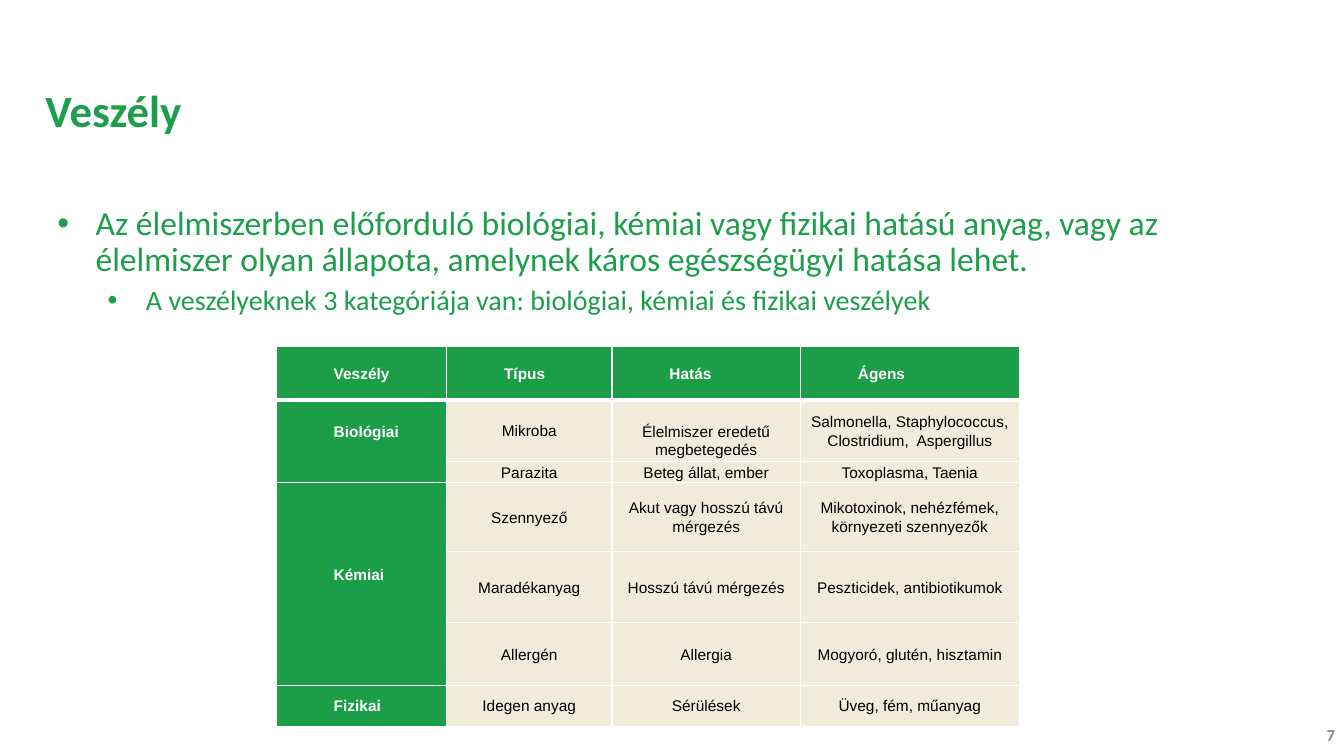
from lxml import etree
from pptx import Presentation, util as u
from pptx.dml.color import RGBColor
from pptx.enum import text
from pptx.oxml.ns import qn

GREEN, HEADER_GREEN, CREAM = "1C9E4A", "1C9E49", "F1EBDC"
WHITE, BLACK, GREY = "FFFFFF", "000000", "898989"
LINE = 0.19  # height of one table text line, inches


def style(paragraph, size, color, font="Calibri", bold=False):
    paragraph.font.size = u.Pt(size)
    paragraph.font.name = font
    paragraph.font.bold = bold
    paragraph.font.color.rgb = RGBColor.from_string(color)


def add_border(cell, side, points):
    line = etree.SubElement(cell._tc.get_or_add_tcPr(), qn(f"a:ln{side}"), w=str(u.Pt(points)))
    fill = etree.SubElement(line, qn("a:solidFill"))
    etree.SubElement(fill, qn("a:srgbClr"), val=WHITE)


deck = Presentation()
deck.slide_width, deck.slide_height = u.Inches(13.33), u.Inches(7.5)
slide = deck.slides.add_slide(deck.slide_layouts[5])

# Title
title = slide.shapes.title
title.left, title.top, title.width, title.height = map(u.Inches, (0.35, 0.4, 12.64, 1.45))
title.text_frame.text = "Veszély"
title.text_frame.auto_size = text.MSO_AUTO_SIZE.NONE
title.text_frame.vertical_anchor = text.MSO_ANCHOR.MIDDLE
heading = title.text_frame.paragraphs[0]
heading.alignment = text.PP_ALIGN.LEFT
heading.line_spacing = 0.9
style(heading, 32, GREEN, bold=True)

# Definition
definition = slide.shapes.add_textbox(*map(u.Inches, (0.35, 2, 12.64, 1.3))).text_frame
definition.word_wrap = True
points = [
    ("Az élelmiszerben előforduló biológiai, kémiai vagy fizikai hatású anyag, "
     "vagy az élelmiszer olyan állapota, amelynek káros egészségügyi hatása lehet.", 24),
    ("A veszélyeknek 3 kategóriája van: biológiai, kémiai és fizikai veszélyek", 20),
]
for level, (words, size) in enumerate(points):
    point = definition.paragraphs[0] if level == 0 else definition.add_paragraph()
    point.text = words
    point.level = level
    point.line_spacing = 0.9
    if level:
        point.space_before = u.Pt(5)
    props = point._p.get_or_add_pPr()
    props.set("marL", str(u.Inches(0.5 * (level + 1))))
    props.set("indent", str(u.Inches(-0.38)))
    etree.SubElement(props, qn("a:buFont"), typeface="Arial")
    etree.SubElement(props, qn("a:buChar"), char="•")
    style(point, size, GREEN)

# Slide number
number = slide.shapes.add_textbox(*map(u.Inches, (12.78, 7.09, 0.56, 0.4))).text_frame
number.word_wrap = True
number.vertical_anchor = text.MSO_ANCHOR.MIDDLE
number.text = "7"
number.paragraphs[0].alignment = text.PP_ALIGN.RIGHT
style(number.paragraphs[0], 12, GREY, bold=True)

# Hazard table
hazards = [
    ("Veszély", "Típus", "Hatás", "Ágens"),
    ("Biológiai", "Mikroba", "Élelmiszer eredetű megbetegedés",
     "Salmonella, Staphylococcus, Clostridium,  Aspergillus"),
    ("", "Parazita", "Beteg állat, ember", "Toxoplasma, Taenia"),
    ("Kémiai", "Szennyező", "Akut vagy hosszú távú mérgezés",
     "Mikotoxinok, nehézfémek, környezeti szennyezők"),
    ("", "Maradékanyag", "Hosszú távú mérgezés", "Peszticidek, antibiotikumok"),
    ("", "Allergén", "Allergia", "Mogyoró, glutén, hisztamin"),
    ("Fizikai", "Idegen anyag", "Sérülések", "Üveg, fém, műanyag"),
]
widths = [1.69, 1.64, 1.87, 2.17]
heights = [0.53, 0.61, 0.21, 0.68, 0.71, 0.62, 0.41]
table = slide.shapes.add_table(
    len(heights), len(widths), u.Inches(2.74), u.Inches(3.44),
    u.Inches(sum(widths)), u.Inches(sum(heights))).table
for column, width in zip(table.columns, widths):
    column.width = u.Inches(width)
for row, height in zip(table.rows, heights):
    row.height = u.Inches(height)

for r, hazard in enumerate(hazards):
    for c, words in enumerate(hazard):
        cell = table.cell(r, c)
        is_heading = r == 0 or c == 0
        for side in "LRTB":
            under_header = (r, side) in ((0, "B"), (1, "T"))
            add_border(cell, side, 3 if under_header else 1)
        cell.fill.solid()
        cell.fill.fore_color.rgb = RGBColor.from_string(HEADER_GREEN if is_heading else CREAM)
        cell.vertical_anchor = text.MSO_ANCHOR.MIDDLE
        cell.margin_left = u.Inches(0.57 if is_heading else 0.07)
        cell.margin_right = u.Inches(0.07)
        cell.margin_top = cell.margin_bottom = 0
        cell.text = words
        entry = cell.text_frame.paragraphs[0]
        entry.alignment = text.PP_ALIGN.LEFT if is_heading else text.PP_ALIGN.CENTER
        entry.line_spacing = 1.07
        style(entry, 11, WHITE if is_heading else BLACK, "Arial", is_heading)

# Categories that span several rows sit one half line above the middle
for first, last in ((1, 2), (3, 5)):
    category = table.cell(first, 0)
    category.merge(table.cell(last, 0))
    category.margin_bottom = u.Inches(LINE)
table.cell(1, 2).margin_top = u.Inches(LINE)

deck.save("out.pptx")
